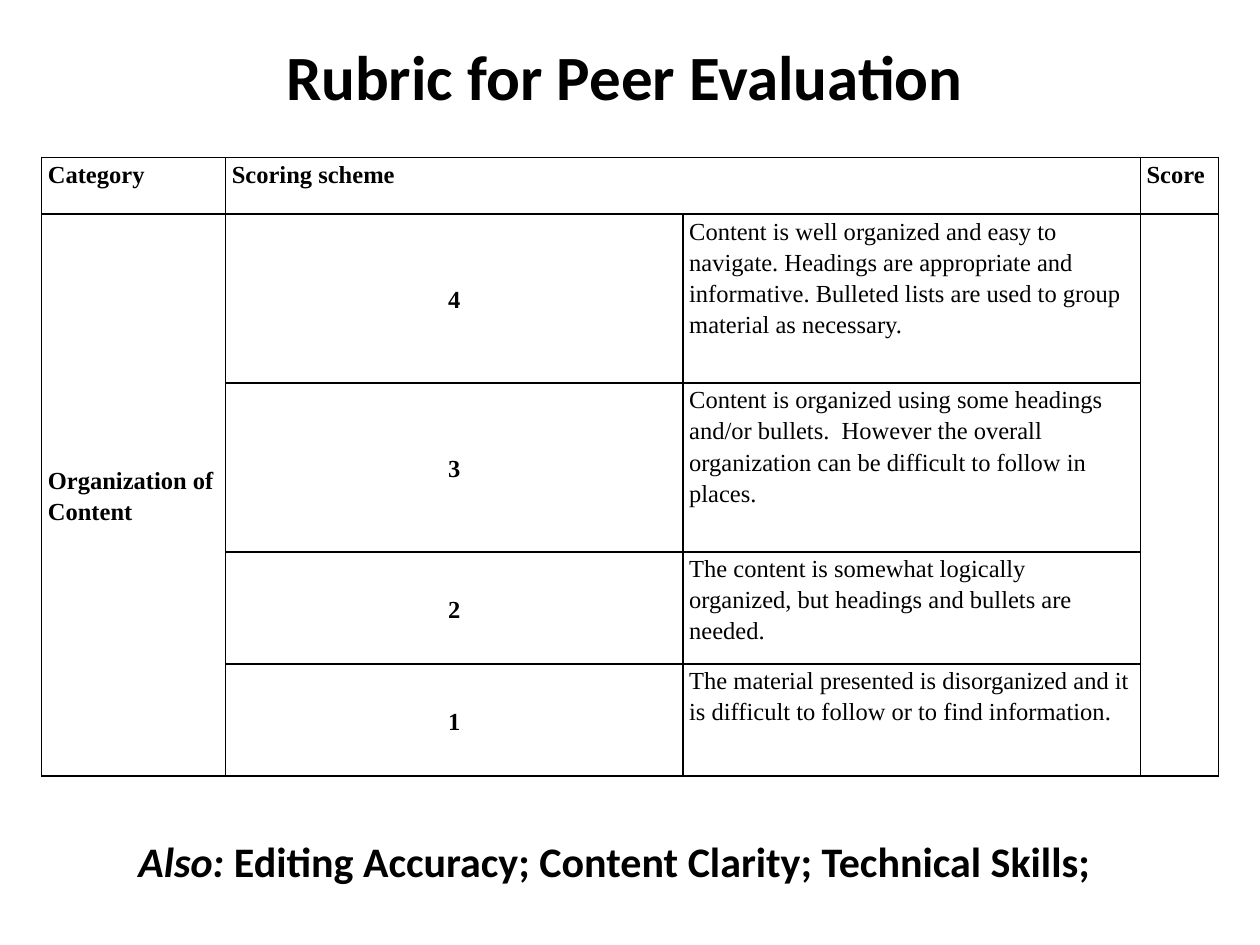
"""Build a one-slide rubric for peer evaluation."""
from lxml import etree
from pptx import Presentation
from pptx.dml.color import RGBColor
from pptx.enum.text import MSO_ANCHOR, MSO_AUTO_SIZE, PP_ALIGN
from pptx.oxml import parse_xml
from pptx.util import Inches, Pt

TOP, MIDDLE = MSO_ANCHOR.TOP, MSO_ANCHOR.MIDDLE
LEFT, CENTER = PP_ALIGN.LEFT, PP_ALIGN.CENTER
FIT = MSO_AUTO_SIZE.SHAPE_TO_FIT_TEXT
BLACK = RGBColor(0, 0, 0)
NS = "http://schemas.openxmlformats.org/drawingml/2006/main"
COLS = [1.46, 3.63, 3.63, 0.62]
ROWS = [0.45, 1.34, 1.34, 0.89, 0.89]
HEADINGS = {0: "Category", 1: "Scoring scheme", 3: "Score"}
LEVELS = [
    "Content is well organized and easy to navigate. Headings are appropriate and "
    "informative. Bulleted lists are used to group material as necessary.",
    "Content is organized using some headings and/or bullets.  However the overall "
    "organization can be difficult to follow in places.",
    "The content is somewhat logically organized, but headings and bullets are needed.",
    "The material presented is disorganized and it is difficult to follow or to find information.",
]


def add_run(p, text, font, size, bold=True, italic=False):
    r = p.add_run()
    r.text = text
    r.font.name, r.font.size = font, Pt(size)
    r.font.bold, r.font.italic = bold, italic
    r.font.color.rgb = BLACK


def fill_cell(cell, text, bold=True, align=LEFT, anchor=TOP):
    cell.vertical_anchor = anchor
    p = cell.text_frame.paragraphs[0]
    p.alignment, p.line_spacing = align, 1.15
    if not bold:
        p.space_before, p.space_after = Pt(3), Pt(6)
    add_run(p, text, "Times New Roman", 14, bold)


prs = Presentation()
prs.slide_width, prs.slide_height = Inches(10), Inches(7.5)
s = prs.slides.add_slide(prs.slide_layouts[5])

table = s.shapes.add_table(len(ROWS), len(COLS), Inches(0.33), Inches(1.25),
                           Inches(sum(COLS)), Inches(sum(ROWS))).table
for column, width in zip(table.columns, COLS):
    column.width = Inches(width)
for row, height in zip(table.rows, ROWS):
    row.height = Inches(height)

for cell in table.iter_cells():
    cell.margin_left = cell.margin_right = Inches(0.05)
    cell.margin_top = cell.margin_bottom = 0
    cell.fill.background()
    tcPr = cell._tc.get_or_add_tcPr()
    for i, side in enumerate(("lnL", "lnR", "lnT", "lnB")):
        ln = etree.Element(f"{{{NS}}}{side}", w=str(Pt(1)))
        fill = etree.SubElement(ln, f"{{{NS}}}solidFill")
        etree.SubElement(fill, f"{{{NS}}}srgbClr", val=str(BLACK))
        tcPr.insert(i, parse_xml(etree.tostring(ln)))

table.cell(0, 1).merge(table.cell(0, 2))
for col in (0, 3):
    table.cell(1, col).merge(table.cell(4, col))

for col, heading in HEADINGS.items():
    fill_cell(table.cell(0, col), heading)
fill_cell(table.cell(1, 0), "Organization of Content", anchor=MIDDLE)
for row, level in enumerate(LEVELS, 1):
    fill_cell(table.cell(row, 1), str(5 - row), align=CENTER, anchor=MIDDLE)
    fill_cell(table.cell(row, 2), level, bold=False)

title = s.shapes.title
title.left, title.top, title.width, title.height = map(Inches, (2.17, 0.25, 5.75, 0.71))
footer = s.shapes.add_textbox(Inches(1), Inches(6.58), Inches(7.76), Inches(0.5))
for sp in (title, footer):
    tf = sp.text_frame
    tf.word_wrap, tf.auto_size, tf.vertical_anchor = False, FIT, TOP
    tf.paragraphs[0].alignment = LEFT

add_run(title.text_frame.paragraphs[0], "Rubric for Peer Evaluation", "Calibri", 36)
p = footer.text_frame.paragraphs[0]
add_run(p, "Also:", "Calibri", 24, italic=True)
add_run(p, " Editing Accuracy; Content Clarity; Technical Skills;", "Calibri", 24)

prs.save("out.pptx")
